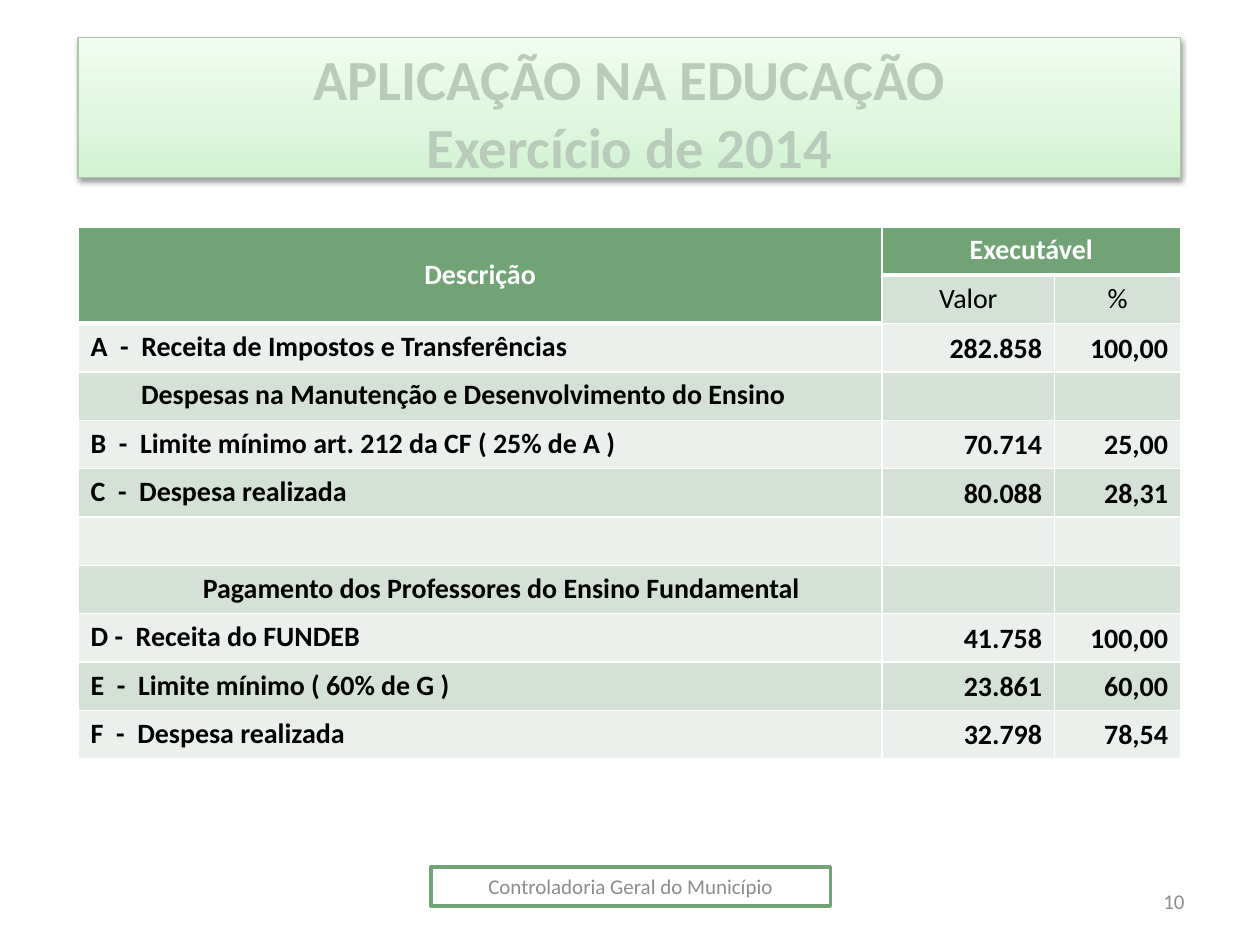
from dataclasses import dataclass

import pptx
import pptx.dml.color
import pptx.enum.shapes
import pptx.enum.text
import pptx.oxml
import pptx.oxml.ns
import pptx.util
from lxml import etree

Inches = pptx.util.Inches
Pt = pptx.util.Pt
RGBColor = pptx.dml.color.RGBColor
Align = pptx.enum.text.PP_ALIGN
Anchor = pptx.enum.text.MSO_ANCHOR
qn = pptx.oxml.ns.qn

WHITE = RGBColor(0xFF, 0xFF, 0xFF)
BLACK = RGBColor(0x00, 0x00, 0x00)
GREEN = RGBColor(0x72, 0xA3, 0x76)
BAND_DARK = RGBColor(0xD5, 0xE0, 0xD6)
BAND_LIGHT = RGBColor(0xEB, 0xF0, 0xEC)
TITLE_TEXT = RGBColor(0xB9, 0xCB, 0xBA)
TITLE_LINE = RGBColor(0xAB, 0xC8, 0xAB)
GRAY = RGBColor(0x8C, 0x8C, 0x8C)
TITLE_STOPS = ((0, "D1F3D1"), (35, "DEF6DE"), (100, "F1FCF1"))

TITLE_FORMAT = {"name": "Calibri", "size": Pt(32.4), "bold": True}
CELL_FORMAT = {"name": "Calibri", "size": Pt(16)}
FOOTER_FORMAT = {"name": "Calibri", "size": Pt(12)}
COLUMN_WIDTHS = (6.38, 1.37, 1.0)
ROW_HEIGHT = 0.384


@dataclass
class Entry:
    label: str = ""
    value: str = ""
    percent: str = ""
    indent: float = 0
    align: Align = Align.LEFT


ENTRIES = (
    Entry("A  -  Receita de Impostos e Transferências", "282.858", "100,00"),
    Entry("Despesas na Manutenção e Desenvolvimento do Ensino", indent=0.4),
    Entry("B  -  Limite mínimo art. 212 da CF ( 25% de A )", "70.714", "25,00"),
    Entry("C  -  Despesa realizada", "80.088", "28,31"),
    Entry(),
    Entry("Pagamento dos Professores do Ensino Fundamental",
          indent=0.34, align=Align.CENTER),
    Entry("D -  Receita do FUNDEB", "41.758", "100,00"),
    Entry("E  -  Limite mínimo ( 60% de G )", "23.861", "60,00"),
    Entry("F  -  Despesa realizada", "32.798", "78,54"),
)


def write(frame, text: str, style: dict, color: RGBColor, align: Align) -> None:
    frame.word_wrap = True
    frame.text = text
    for para in frame.paragraphs:
        para.alignment = align
        for span in para.runs:
            for name, value in style.items():
                setattr(span.font, name, value)
            span.font.color.rgb = color


def add_box(slide, left: float, top: float, width: float, height: float,
            line: RGBColor, weight: float):
    box = slide.shapes.add_shape(
        pptx.enum.shapes.MSO_SHAPE.RECTANGLE,
        Inches(left), Inches(top), Inches(width), Inches(height))
    box.shadow.inherit = False
    box.line.color.rgb = line
    box.line.width = Pt(weight)
    return box


def add_title(slide) -> None:
    box = add_box(slide, 0.62, 0.3, 8.75, 1.11, TITLE_LINE, 0.75)
    box.fill.gradient()
    box.fill.gradient_angle = 90
    properties = box._element.spPr
    stops = properties.find(".//" + qn("a:gsLst"))
    for stop in list(stops):
        stops.remove(stop)
    for position, color in TITLE_STOPS:
        stop = etree.SubElement(stops, qn("a:gs"), pos=str(position * 1000))
        etree.SubElement(stop, qn("a:srgbClr"), val=color)
    shadow = etree.SubElement(
        properties.find(qn("a:effectLst")), qn("a:outerShdw"),
        blurRad=str(Pt(3.1)), dist=str(Pt(1.6)), dir="5400000", rotWithShape="0")
    shade = etree.SubElement(shadow, qn("a:srgbClr"), val="000000")
    etree.SubElement(shade, qn("a:alpha"), val="38000")
    box.text_frame.vertical_anchor = Anchor.TOP
    write(box.text_frame, "APLICAÇÃO NA EDUCAÇÃO\vExercício de 2014",
          TITLE_FORMAT, TITLE_TEXT, Align.CENTER)


def set_borders(cell, bottom: float) -> None:
    """Draw white cell borders; they must precede the fill in the XML."""
    properties = cell._tc.get_or_add_tcPr()
    weights = {"lnL": 1, "lnR": 1, "lnT": 1, "lnB": bottom}
    for index, (side, weight) in enumerate(weights.items()):
        border = etree.Element(qn("a:" + side), w=str(Pt(weight)))
        fill = etree.SubElement(border, qn("a:solidFill"))
        etree.SubElement(fill, qn("a:srgbClr"), val=str(WHITE))
        properties.insert(index, border)


def fill_cell(cell, text: str, fill: RGBColor, align: Align, anchor: Anchor = Anchor.TOP,
              bold: bool = True, color: RGBColor = BLACK, bottom: float = 1) -> None:
    cell.fill.solid()
    cell.fill.fore_color.rgb = fill
    set_borders(cell, bottom)
    cell.vertical_anchor = anchor
    if text:
        write(cell.text_frame, text, CELL_FORMAT | {"bold": bold}, color, align)
    else:
        # An empty cell needs the small size too, or its row grows.
        etree.SubElement(cell.text_frame.paragraphs[0]._p,
                         qn("a:endParaRPr"), sz="1600")


def add_education_table(slide) -> None:
    row_count = len(ENTRIES) + 2
    table = slide.shapes.add_table(
        row_count, len(COLUMN_WIDTHS), Inches(0.62), Inches(1.8),
        Inches(sum(COLUMN_WIDTHS)), Inches(row_count * ROW_HEIGHT)).table
    for column, width in zip(table.columns, COLUMN_WIDTHS):
        column.width = Inches(width)
    for row in table.rows:
        row.height = Inches(ROW_HEIGHT)

    table.cell(0, 0).merge(table.cell(1, 0))
    table.cell(0, 1).merge(table.cell(0, 2))
    heads = ((0, 0, "Descrição", Anchor.MIDDLE), (1, 0, "", Anchor.MIDDLE),
             (0, 1, "Executável", Anchor.TOP), (0, 2, "", Anchor.TOP))
    for row, column, text, anchor in heads:
        fill_cell(table.cell(row, column), text, GREEN, Align.CENTER, anchor,
                  color=WHITE, bottom=3)
    for column, text in enumerate(("Valor", "%"), start=1):
        fill_cell(table.cell(1, column), text, BAND_DARK, Align.CENTER, bold=False)

    for row, entry in enumerate(ENTRIES, start=2):
        band = BAND_DARK if row % 2 else BAND_LIGHT
        label = table.cell(row, 0)
        fill_cell(label, entry.label, band, entry.align)
        label.margin_left = Inches(0.1 + entry.indent)
        for column, text in enumerate((entry.value, entry.percent), start=1):
            fill_cell(table.cell(row, column), text, band, Align.RIGHT, Anchor.BOTTOM)


def add_footer(slide) -> None:
    box = add_box(slide, 3.42, 6.88, 3.17, 0.31, GREEN, 2)
    box.fill.solid()
    box.fill.fore_color.rgb = WHITE
    number = slide.shapes.add_textbox(
        Inches(7.17), Inches(6.95), Inches(2.33), Inches(0.4))
    for shape, text, align in (
            (box, "Controladoria Geral do Município", Align.CENTER),
            (number, "10", Align.RIGHT)):
        shape.text_frame.vertical_anchor = Anchor.MIDDLE
        write(shape.text_frame, text, FOOTER_FORMAT, GRAY, align)


def main() -> None:
    deck = pptx.Presentation()
    deck.slide_width = Inches(10)
    deck.slide_height = Inches(7.5)
    slide = deck.slides.add_slide(deck.slide_layouts[6])
    add_title(slide)
    add_education_table(slide)
    add_footer(slide)
    deck.save("out.pptx")


if __name__ == "__main__":
    main()
